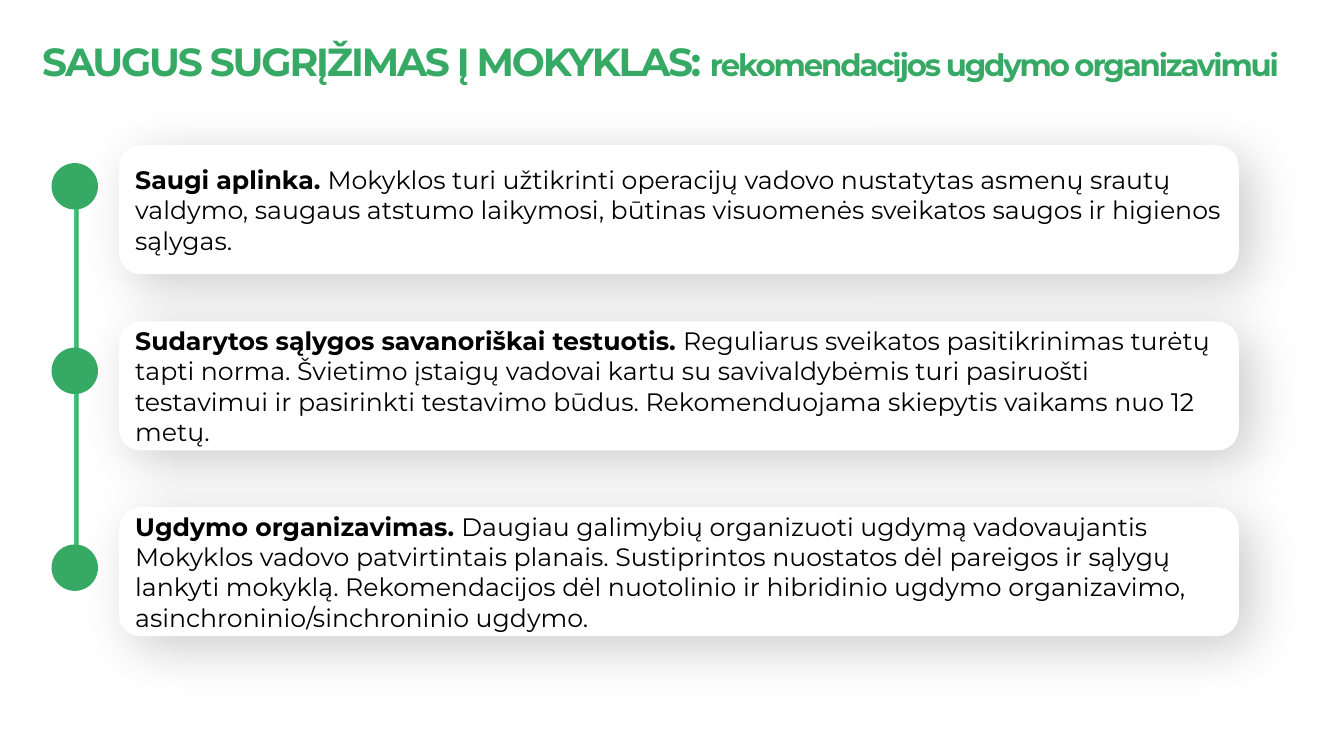
from lxml.etree import SubElement
from pptx import Presentation
from pptx.dml.color import RGBColor
from pptx.enum.shapes import MSO_SHAPE
from pptx.enum.text import MSO_ANCHOR, MSO_AUTO_SIZE, PP_ALIGN
from pptx.oxml.ns import qn
from pptx.util import Cm, Pt

GREEN, LIGHT_GREEN, WHITE, BLACK = "36AA65", "40C978", "FFFFFF", "000000"

STEPS = [  # dot top, card top, heading, text
    (4.11, 3.66, "Saugi aplinka. ",
     "Mokyklos turi užtikrinti operacijų vadovo nustatytas asmenų srautų "
     "valdymo, saugaus atstumo laikymosi, būtinas visuomenės sveikatos saugos "
     "ir higienos sąlygas."),
    (8.76, 8.1, "Sudarytos sąlygos savanoriškai testuotis. ",
     "Reguliarus sveikatos pasitikrinimas turėtų tapti norma. Švietimo įstaigų "
     "vadovai kartu su savivaldybėmis turi pasiruošti testavimui ir pasirinkti "
     "testavimo būdus. Rekomenduojama skiepytis vaikams nuo 12 metų."),
    (13.72, 12.78, "Ugdymo organizavimas. ",
     "Daugiau galimybių organizuoti ugdymą vadovaujantis Mokyklos vadovo "
     "patvirtintais planais. Sustiprintos nuostatos dėl pareigos ir sąlygų "
     "lankyti mokyklą. Rekomendacijos dėl nuotolinio ir hibridinio ugdymo "
     "organizavimo, asinchroninio/sinchroninio ugdymo."),
]


def rgb(value):
    return RGBColor.from_string(value)


class Deck:
    font = "Montserrat"

    def __init__(self, prs):
        self.slide = prs.slides.add_slide(prs.slide_layouts[5])

    def run(self, p, text, size, color, bold=True, spacing=None):
        r = p.add_run()
        r.text = text
        r.font.name = self.font
        r.font.size = Pt(size)
        r.font.bold = bold
        r.font.color.rgb = rgb(color)
        if spacing is not None:
            r.font._element.set("spc", str(int(spacing * 100)))

    def title(self, left, top, width, height, parts):
        sp = self.slide.shapes.title
        sp.left, sp.top, sp.width, sp.height = map(Cm, (left, top, width, height))
        tf = sp.text_frame
        tf.word_wrap = True
        tf.auto_size = MSO_AUTO_SIZE.NONE
        tf.vertical_anchor = MSO_ANCHOR.BOTTOM
        p = tf.paragraphs[0]
        p.alignment = PP_ALIGN.LEFT
        p.line_spacing = 0.9
        for text, size in parts:
            self.run(p, text, size, GREEN, spacing=-1.5)

    def shape(self, kind, left, top, width, height, fill):
        sp = self.slide.shapes.add_shape(kind, *map(Cm, (left, top, width, height)))
        sp.shadow.inherit = False
        sp.fill.solid()
        sp.fill.fore_color.rgb = rgb(fill)
        sp.line.fill.background()
        return sp

    def rail(self, left, top, length, thickness):
        sp = self.shape(MSO_SHAPE.RECTANGLE, left, top, length, thickness, GREEN)
        sp.rotation = 270
        sp.fill.gradient()
        sp.fill.gradient_angle = 90
        stops = zip(sp.fill.gradient_stops, ((0, GREEN), (0.81, LIGHT_GREEN)))
        for stop, (position, color) in stops:
            stop.position = position
            stop.color.rgb = rgb(color)

    def dot(self, left, top, size):
        self.shape(MSO_SHAPE.OVAL, left, top, size, size, GREEN)

    def soft_shadow(self, sp):
        effects = sp._element.spPr.find(qn("a:effectLst"))
        shadow = SubElement(effects, qn("a:outerShdw"), blurRad=str(Pt(37)),
                            dist=str(Pt(12)), dir=str(43 * 60000),
                            algn="tl", rotWithShape="0")
        color = SubElement(shadow, qn("a:srgbClr"), val=BLACK)
        SubElement(color, qn("a:alpha"), val="20000")

    def card(self, left, top, width, height, heading, text):
        sp = self.shape(MSO_SHAPE.ROUNDED_RECTANGLE, left, top, width, height, WHITE)
        self.soft_shadow(sp)
        tf = sp.text_frame
        tf.word_wrap = True
        tf.vertical_anchor = MSO_ANCHOR.MIDDLE
        p = tf.paragraphs[0]
        p.alignment = PP_ALIGN.LEFT
        self.run(p, heading, 18, BLACK)
        self.run(p, text, 18, BLACK, bold=False)


def main():
    prs = Presentation()
    prs.slide_width, prs.slide_height = Cm(33.87), Cm(19.05)
    deck = Deck(prs)
    deck.rail(-2.79, 9.3, 9.42, 0.13)
    deck.title(0.81, -0.94, 35.84, 3.2, [
        ("SAUGUS SUGRĮŽIMAS Į MOKYKLAS: ", 28),
        ("rekomendacijos ugdymo organizavimui", 22),
    ])
    for dot_top, card_top, heading, text in STEPS:
        deck.card(3, card_top, 28.22, 3.25, heading, text)
        deck.dot(1.3, dot_top, 1.17)
    prs.save("out.pptx")


if __name__ == "__main__":
    main()
